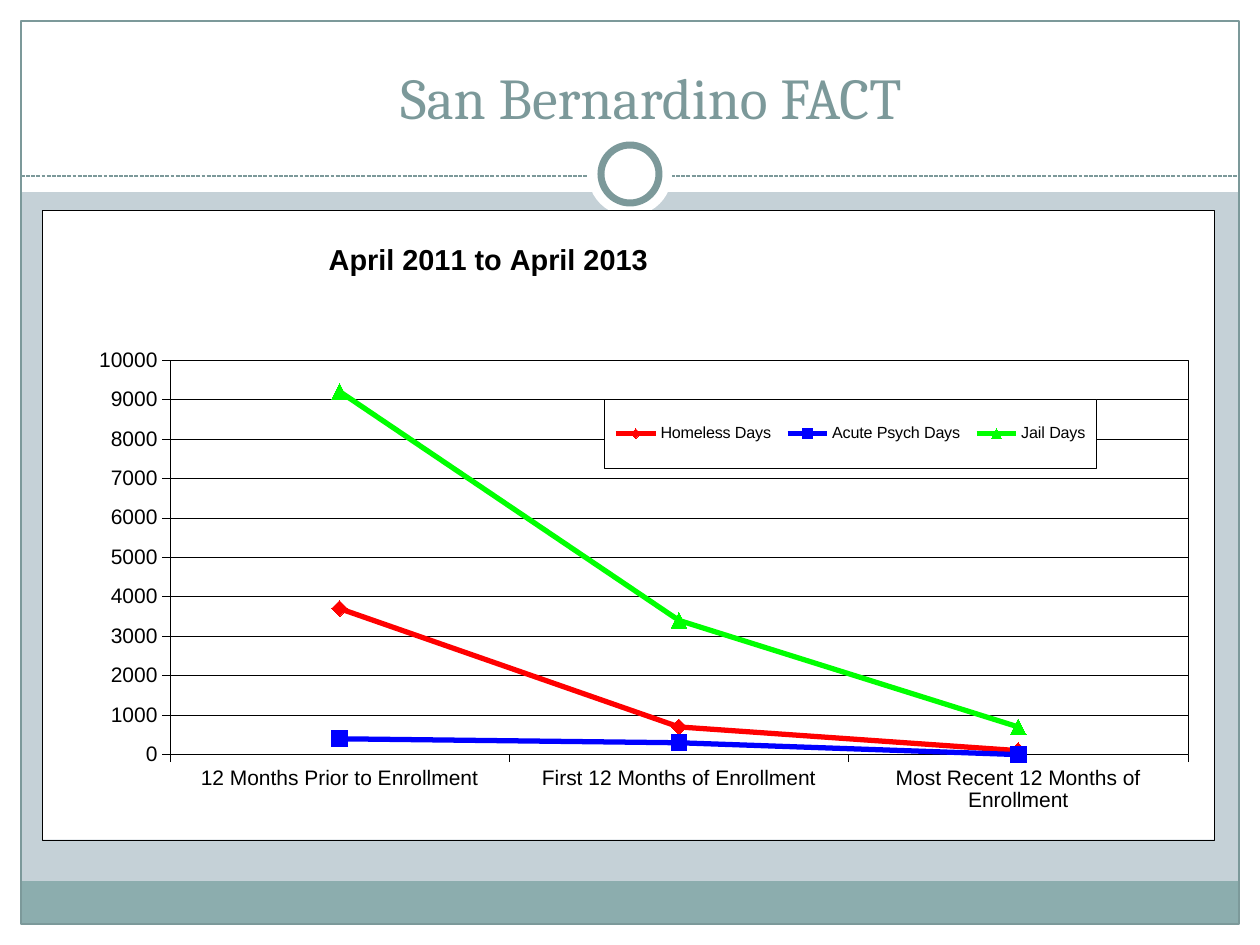
import lxml.etree
import pptx
import pptx.chart.data
import pptx.dml.color
import pptx.enum.chart
import pptx.enum.dml
import pptx.enum.shapes
import pptx.enum.text
import pptx.oxml
import pptx.oxml.ns
import pptx.util

PX = 914400 / 126
WIDTH, HEIGHT = 1260, 945
COLORS = {
    "white": "FFFFFF", "black": "000000", "body": "C5D1D7", "band": "8CADAE",
    "accent": "7C999A", "homeless": "FF0000", "psych": "0000FF", "jail": "00FF00",
}
PERIODS = [
    "12 Months Prior to Enrollment",
    "First 12 Months of Enrollment",
    "Most Recent 12 Months of Enrollment",
]
MARKERS = pptx.enum.chart.XL_MARKER_STYLE
OUTCOMES = [
    ("Homeless Days", (3700, 700, 100), "homeless", MARKERS.DIAMOND),
    ("Acute Psych Days", (400, 300, 0), "psych", MARKERS.SQUARE),
    ("Jail Days", (9200, 3400, 700), "jail", MARKERS.TRIANGLE),
]
SHAPES = pptx.enum.shapes.MSO_SHAPE


def emu(*lengths):
    return [pptx.util.Emu(round(length * PX)) for length in lengths]


def rgb(name):
    return pptx.dml.color.RGBColor.from_string(COLORS[name])


def style_line(line, color, points):
    line.color.rgb = rgb(color)
    line.width = pptx.util.Pt(points)


def style_font(font, size, color="black", name="Arial", bold=False):
    font.size = pptx.util.Pt(size)
    font.name = name
    font.bold = bold
    font.color.rgb = rgb(color)


def write_text(frame, text, align=pptx.enum.text.PP_ALIGN.CENTER, **font_format):
    paragraph = frame.paragraphs[0]
    paragraph.alignment = align
    run = paragraph.add_run()
    run.text = text
    style_font(run.font, **font_format)


def add_part(slide, kind, box, fill=None, line=None, points=0.75):
    part = slide.shapes.add_shape(kind, *emu(*box))
    part.shadow.inherit = False
    if fill:
        part.fill.solid()
        part.fill.fore_color.rgb = rgb(fill)
    else:
        part.fill.background()
    if line:
        style_line(part.line, line, points)
    else:
        part.line.fill.background()
    return part


def add_frame(slide, left, top, width, height):
    """White page border, footer band and outline around the inner box."""
    right, bottom = left + width, top + height
    for box in [
        (0, bottom, WIDTH, HEIGHT - bottom),
        (0, 0, WIDTH, top + 171),
        (0, 0, left, HEIGHT),
        (right, 0, WIDTH - right, HEIGHT),
    ]:
        add_part(slide, SHAPES.RECTANGLE, box, fill="white")
    add_part(slide, SHAPES.RECTANGLE, (left, bottom - 43, width, 43), fill="band")
    add_part(slide, SHAPES.RECTANGLE, (left, top, width, height), line="accent")


def add_header(slide, left, top, width, height):
    """Title, dashed divider and the ring at its middle."""
    divider_y = top + height
    divider = slide.shapes.add_connector(
        pptx.enum.shapes.MSO_CONNECTOR.STRAIGHT,
        *emu(left, divider_y, left + width, divider_y))
    style_line(divider.line, "accent", 0.75)
    divider.line.dash_style = pptx.enum.dml.MSO_LINE.SQUARE_DOT
    lxml.etree.SubElement(divider._element.spPr, pptx.oxml.ns.qn("a:effectLst"))

    # Ring on its white disc
    center_x, center_y = left + width // 2, divider_y - 2
    for size, line in [(84, None), (58, "accent")]:
        box = (center_x - size // 2, center_y - size // 2, size, size)
        add_part(slide, SHAPES.OVAL, box, fill="white", line=line, points=4)

    title = slide.shapes.add_textbox(*emu(left + 63, top - 42, 1134, 158))
    title.text_frame.word_wrap = True
    title.text_frame.vertical_anchor = pptx.enum.text.MSO_ANCHOR.BOTTOM
    write_text(title.text_frame, "San Bernardino FACT",
               size=33, color="accent", name="Cambria")


def set_layout(element, index, **fractions):
    """Place a chart part by fractions of the chart's box."""
    for old in element.findall(pptx.oxml.ns.qn("c:layout")):
        element.remove(old)
    layout = lxml.etree.Element(pptx.oxml.ns.qn("c:layout"))
    manual = lxml.etree.SubElement(layout, pptx.oxml.ns.qn("c:manualLayout"))
    settings = {"xMode": "edge", "yMode": "edge", **fractions}
    if index == 0:
        settings = {"layoutTarget": "inner", **settings}
    for tag, value in settings.items():
        lxml.etree.SubElement(manual, pptx.oxml.ns.qn(f"c:{tag}"), val=str(value))
    element.insert(index, layout)


def box_format():
    """White fill with a hairline black border, for a chart part."""
    return pptx.oxml.parse_xml(
        f'<c:spPr {pptx.oxml.ns.nsdecls("c", "a")}>'
        f'<a:solidFill><a:srgbClr val="{COLORS["white"]}"/></a:solidFill>'
        f'<a:ln w="3175"><a:solidFill><a:srgbClr val="{COLORS["black"]}"/>'
        '</a:solidFill></a:ln></c:spPr>')


def add_days_chart(slide, left, top, width, height):
    days = pptx.chart.data.CategoryChartData()
    days.categories = PERIODS
    for name, values, _, _ in OUTCOMES:
        days.add_series(name, values)
    chart = slide.shapes.add_chart(
        pptx.enum.chart.XL_CHART_TYPE.LINE_MARKERS,
        *emu(left, top, width, height), days).chart
    style_font(chart.font, 12)

    # Title
    write_text(chart.chart_title.text_frame, "April 2011 to April 2013",
               size=16.5, bold=True)
    set_layout(chart.chart_title._element, 1, x=0.24, y=0.04)

    # Axes
    for axis in (chart.category_axis, chart.value_axis):
        style_font(axis.tick_labels.font, 12)
        style_line(axis.format.line, "black", 0.25)
        axis.major_tick_mark = pptx.enum.chart.XL_TICK_MARK.OUTSIDE
    chart.value_axis.minimum_scale = 0
    chart.value_axis.maximum_scale = 10000
    chart.value_axis.major_unit = 1000
    style_line(chart.value_axis.major_gridlines.format.line, "black", 0.25)

    # Series
    chart.plots[0].vary_by_categories = False
    for series, (_, _, color, marker) in zip(chart.plots[0].series, OUTCOMES):
        series.smooth = False
        style_line(series.format.line, color, 3)
        series.marker.style = marker
        series.marker.size = 9
        series.marker.format.fill.solid()
        series.marker.format.fill.fore_color.rgb = rgb(color)
        style_line(series.marker.format.line, color, 0.75)

    # Legend
    chart.has_legend = True
    chart.legend.position = pptx.enum.chart.XL_LEGEND_POSITION.RIGHT
    chart.legend.include_in_layout = False
    style_font(chart.legend.font, 9.2)
    legend = chart.legend._element
    set_layout(legend, 1, x=0.48, y=0.3, w=0.42, h=0.11)
    legend.find(pptx.oxml.ns.qn("c:overlay")).addnext(box_format())

    # Plot and chart backgrounds
    chart_xml = chart._chartSpace.find(pptx.oxml.ns.qn("c:chart"))
    plot_area = chart_xml.find(pptx.oxml.ns.qn("c:plotArea"))
    set_layout(plot_area, 0, x=0.109, y=0.238, w=0.869, h=0.627)
    plot_area.append(box_format())
    chart_xml.addnext(box_format())


def main():
    deck = pptx.Presentation()
    deck.slide_width, deck.slide_height = emu(WIDTH, HEIGHT)
    slide = deck.slides.add_slide(deck.slide_layouts[6])
    slide.background.fill.solid()
    slide.background.fill.fore_color.rgb = rgb("body")
    add_frame(slide, 21, 21, 1218, 903)
    add_header(slide, 21, 21, 1218, 155)
    add_days_chart(slide, 42, 210, 1172, 630)
    deck.save("out.pptx")


if __name__ == "__main__":
    main()
